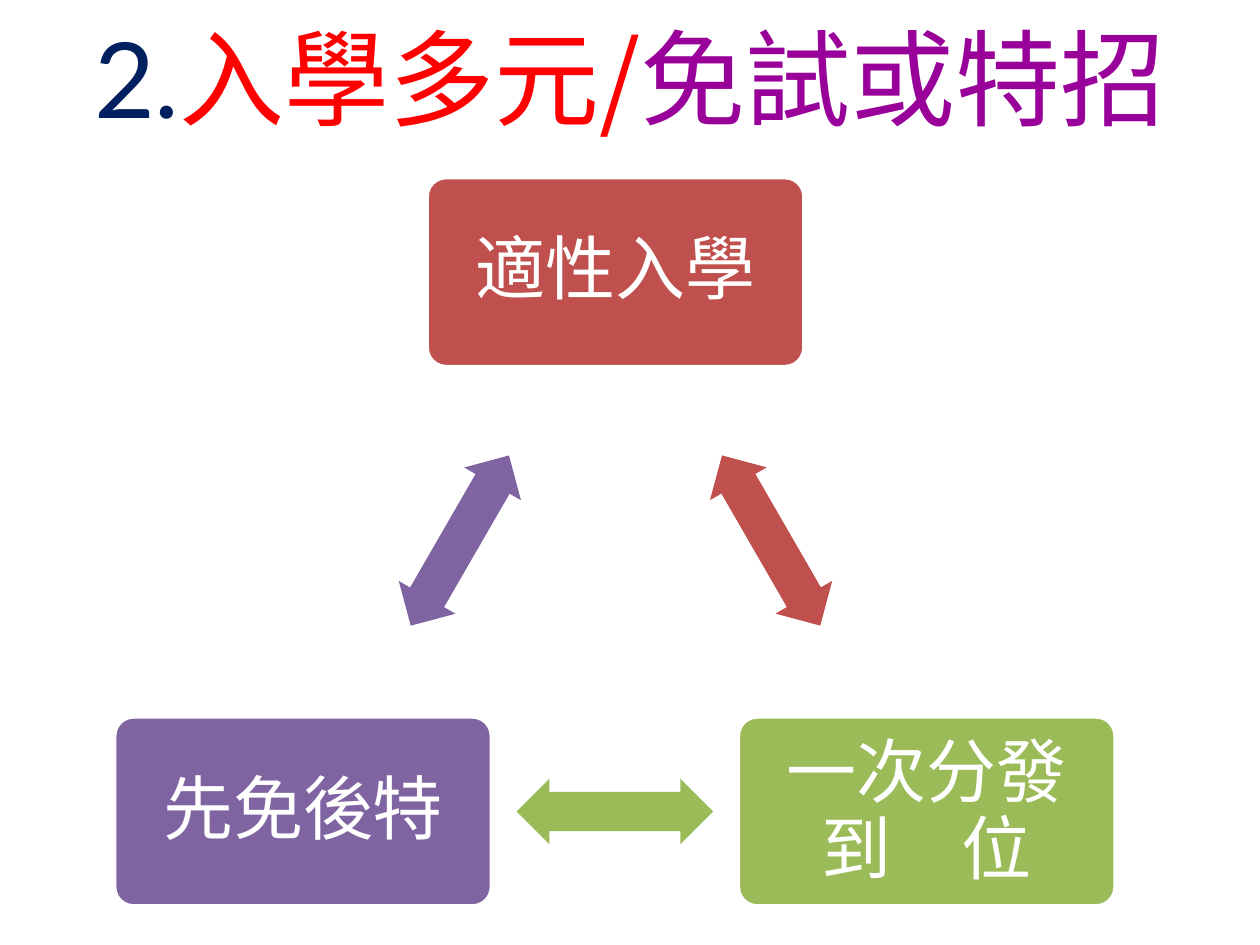
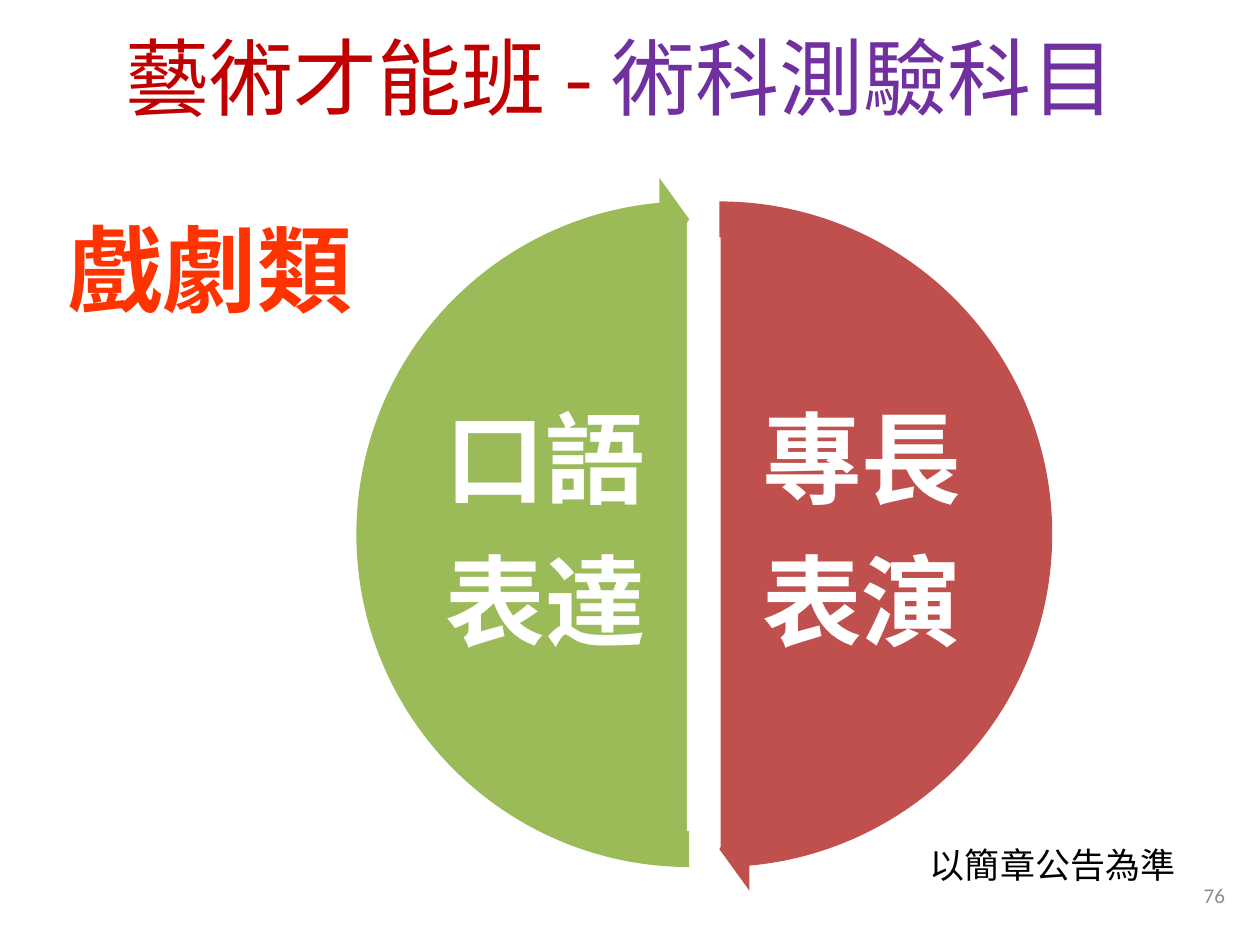
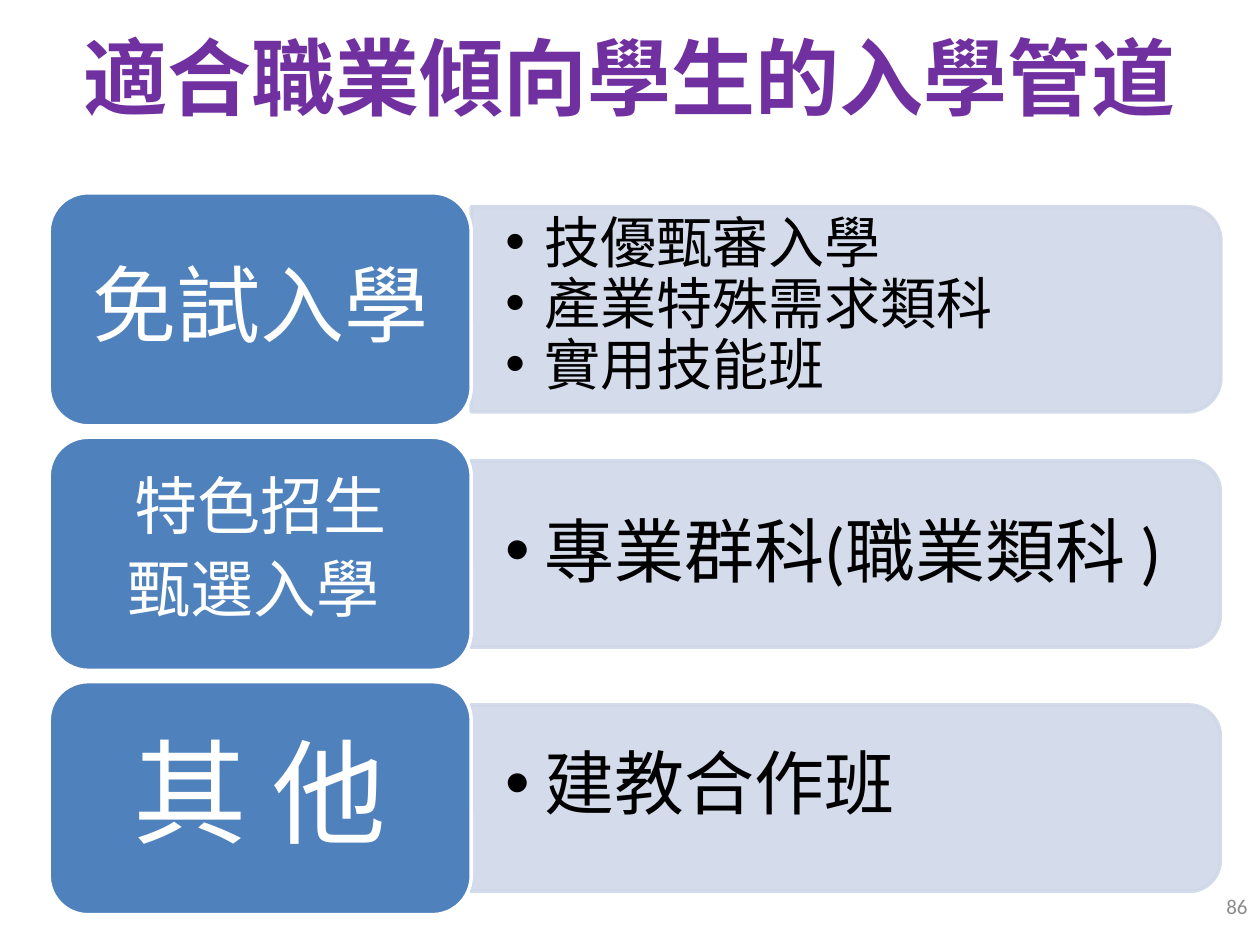
from lxml.etree import SubElement
from pptx import Presentation
from pptx.dml.color import RGBColor
from pptx.enum.shapes import MSO_SHAPE as Preset
from pptx.enum.text import MSO_ANCHOR as Anchor, MSO_AUTO_SIZE as AutoSize, PP_ALIGN as Align
from pptx.oxml.ns import qn
from pptx.util import Pt

PX = 9144
CJK = "Noto Sans CJK SC"
COLORS = {
    "red": "C0504D", "green": "9BBB59", "purple": "8064A2", "blue": "4F81BD",
    "pale": "D0D8E8", "white": "FFFFFF", "black": "000000", "gray": "8C8C8C",
    "navy": "002060", "bright_red": "FF0000", "magenta": "990099",
    "dark_red": "C00000", "violet": "7030A0", "orange": "FF3300",
}


def write(frame, lines, size, align=Align.CENTER, inset=(10, 5), leading=None,
          gap=0, bullet=False, bold=False, wrap=True):
    frame.word_wrap = wrap
    frame.auto_size = AutoSize.NONE
    frame.vertical_anchor = Anchor.MIDDLE
    frame.margin_left = frame.margin_right = inset[0] * PX
    frame.margin_top = frame.margin_bottom = inset[1] * PX
    for index, runs in enumerate(lines):
        para = frame.paragraphs[0] if index == 0 else frame.add_paragraph()
        if bullet:
            props = para._p.get_or_add_pPr()
            props.set("marL", str(31 * PX))
            props.set("indent", str(-31 * PX))
            SubElement(props, qn("a:buFont")).set("typeface", "Arial")
            SubElement(props, qn("a:buChar")).set("char", "•")
        para.alignment = align
        if leading:
            para.line_spacing = leading
        if index and gap:
            para.space_before = Pt(gap)
        for text, color, family in runs:
            span = para.add_run()
            span.text = text
            span.font.size = Pt(size)
            span.font.bold = bold
            span.font.color.rgb = RGBColor.from_string(COLORS[color])
            span.font.name = family
            SubElement(span.font._element, qn("a:ea")).set("typeface", CJK)


def add_preset(page, preset, place, fill, line=None, adjust=(), rotation=0):
    shape = page.shapes.add_shape(preset, *(value * PX for value in place))
    shape.shadow.inherit = False
    shape.rotation = rotation
    for index, value in enumerate(adjust):
        shape.adjustments[index] = value
    shape.fill.solid()
    shape.fill.fore_color.rgb = RGBColor.from_string(COLORS[fill])
    if line:
        shape.line.color.rgb = RGBColor.from_string(COLORS[line])
        shape.line.width = Pt(2)
    else:
        shape.line.fill.background()
    return shape


deck = Presentation()
deck.slide_width, deck.slide_height = 1000 * PX, 750 * PX
layout = deck.slide_layouts[5]
heading = layout.placeholders[0]
heading.left, heading.top, heading.width, heading.height = 0, 2 * PX, 1000 * PX, 117 * PX

titles = [
    (60, False, [("2.", "navy", "Lato"), ("入學多元/", "bright_red", CJK),
                 ("免試或特招", "magenta", "Arial")]),
    (48, False, [("藝術才能班 - ", "dark_red", CJK), ("術科測驗科目 ", "violet", CJK)]),
    (48, True, [("適合職業傾向學生的入學管道", "violet", CJK)]),
]
pages = []
for size, bold, runs in titles:
    page = deck.slides.add_slide(layout)
    write(page.shapes.title.text_frame, [runs], size, bold=bold)
    pages.append(page)
cycle_page, drama_page, routes_page = pages

stages = [
    ("適性入學", "Calibri", "red", (339, 141), (534, 403), 60),
    ("一次分發到　位", CJK, "green", (586, 569), (410, 618), 180),
    ("先免後特", CJK, "purple", (91, 569), (287, 403), 300),
]
for text, family, color, corner, arrow_corner, rotation in stages:
    stage = add_preset(cycle_page, Preset.ROUNDED_RECTANGLE, (*corner, 299, 150),
                       color, "white", [0.1])
    leading = Pt(44) if len(text) > 4 else 0.9
    write(stage.text_frame, [[(text, "white", family)]], 40, inset=(17, 17), leading=leading)
    add_preset(cycle_page, Preset.LEFT_RIGHT_ARROW, (*arrow_corner, 156, 52),
               color, adjust=[0.6, 0.5], rotation=rotation)

halves = [
    (["專長", "表演"], "red", 318, 594, 287, (162, 54), 50.73),
    (["口語", "表達"], "green", 294, 343, 263, (54, 162), 158.73),
]
for words, color, pie_left, text_left, arrow_left, angles, arrow_end in halves:
    add_preset(drama_page, Preset.PIE, (pie_left, 171, 505, 505), color, "white", angles)
    box = drama_page.shapes.add_textbox(text_left * PX, 303 * PX, 180 * PX, 241 * PX)
    write(box.text_frame, [[(word, "white", CJK)] for word in words], 57,
          inset=(8, 8), leading=Pt(62), gap=20, bold=True)
for words, color, pie_left, text_left, arrow_left, angles, arrow_end in halves:
    add_preset(drama_page, Preset.CIRCULAR_ARROW, (arrow_left, 140, 568, 568), color,
               adjust=(0.05, 3.28, arrow_end, angles[0], 0.06))

labels = [
    (drama_page, "戲劇類", (43, 162, 247, 101), 54, "orange", CJK, Align.CENTER, True),
    (drama_page, "以簡章公告為準", (727, 664, 217, 44), 20, "black", CJK, Align.CENTER, False),
    (drama_page, "76", (930, 695, 52, 31), 12, "gray", "Calibri", Align.RIGHT, False),
    (routes_page, "86", (938, 703, 62, 32), 12, "gray", "Calibri", Align.RIGHT, False),
]
for page, text, place, size, color, family, align, bold in labels:
    box = page.shapes.add_textbox(*(value * PX for value in place))
    write(box.text_frame, [[(text, color, family)]], size, align, bold=bold,
          wrap=align == Align.RIGHT)

routes = [
    (["免試入學"], 48, 0.9, (20, 10),
     ["技優甄審入學", "產業特殊需求類科", "實用技能班"], 32, Pt(30), 163),
    (["特色招生", "甄選入學 "], 36, Pt(34), (15, 7),
     ["專業群科(職業類科 )"], 40, Pt(44), 148),
    (["其\u2002他".replace("\u2002", " ")], 65, 0.9, (27, 14),
     ["建教合作班"], 40, Pt(30), 148),
]
bar_left, bar_length = 374, 595
for row, (names, size, leading, inset, items, item_size, item_leading, depth) in enumerate(routes):
    top = 153 + 194 * row
    middle = top + 92
    bar = add_preset(routes_page, Preset.ROUND_2_SAME_RECTANGLE,
                     (bar_left + (bar_length - depth) // 2, middle - bar_length // 2,
                      depth, bar_length), "pale", "pale", rotation=90)
    for tint in bar._element.spPr.iter(qn("a:srgbClr")):
        SubElement(tint, qn("a:alpha")).set("val", "90000")
    box = routes_page.shapes.add_textbox(bar_left * PX, (middle - depth // 2 + 8) * PX,
                                         588 * PX, (depth - 16) * PX)
    write(box.text_frame, [[(item, "black", "Calibri")] for item in items], item_size,
          Align.LEFT, (27, 14), item_leading, gap=5, bullet=True)
    name_box = add_preset(routes_page, Preset.ROUNDED_RECTANGLE, (39, top, 335, 185),
                          "blue", "white")
    write(name_box.text_frame, [[(name, "white", "Calibri")] for name in names], size,
          inset=inset, leading=leading, gap=13)

deck.save("out.pptx")
